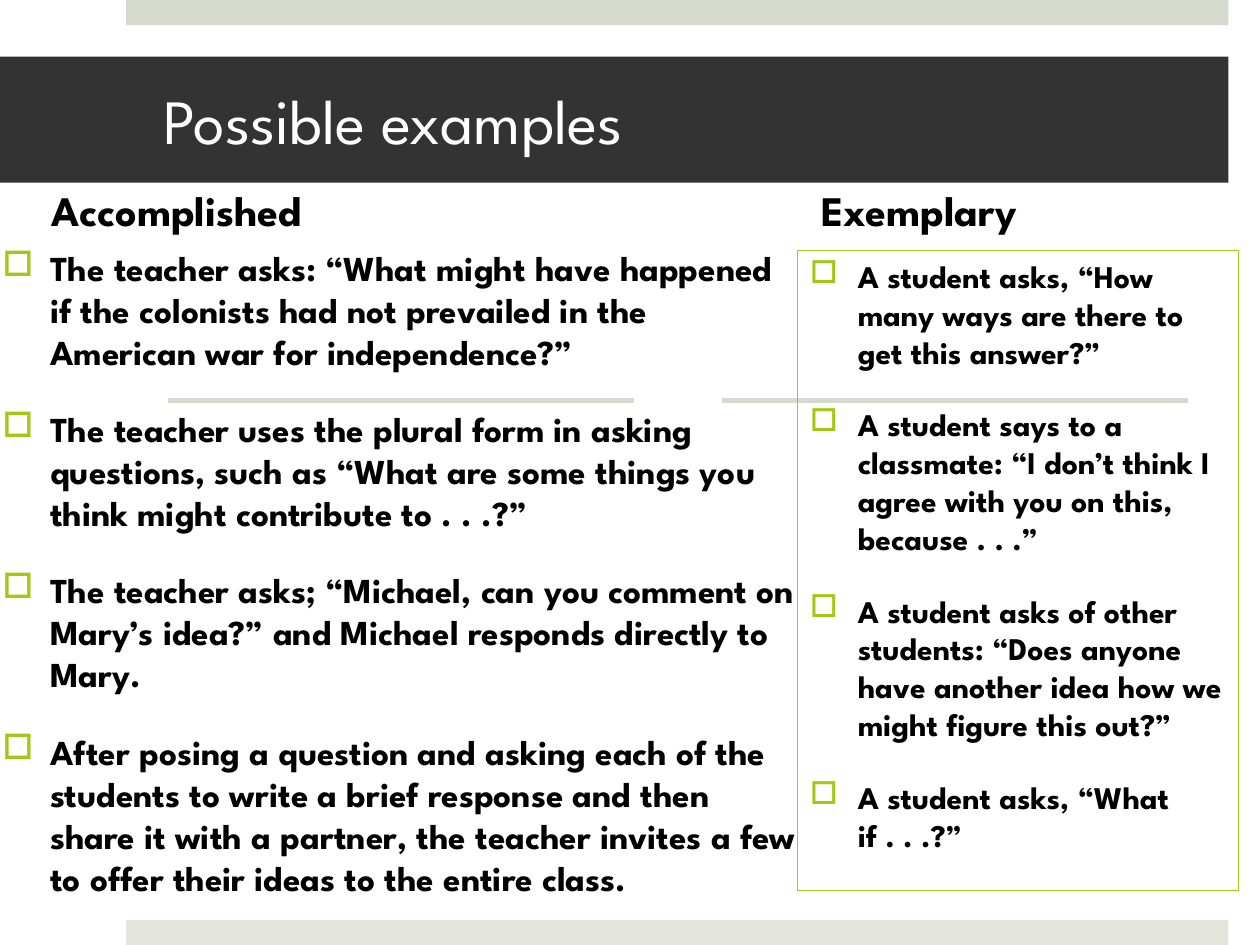
import pptx
import pptx.util
import pptx.dml.color
import pptx.enum.shapes
import pptx.enum.text
import pptx.oxml.ns
import lxml.etree

COLORS = {"band_top": "D6D9CD", "band_bottom": "E4E6DE", "rule": "D6D9CD",
          "banner": "333333", "title": "FFFFFF", "ink": "000000", "accent": "A2C816"}
FONT = "League Spartan"
WIDTH, HEIGHT = 10, 7.5
COLUMNS, ROWS = 100, 75
ANCHOR = pptx.enum.text.MSO_ANCHOR

TITLE = "Possible examples"
BANDS = [("band_top", (10, 0, 87.5, 2)), ("band_bottom", (10, 73, 87.5, 2))]
BANNER = (0, 4.5, 97.5, 10)
RULE_ROW, RULE_LENGTH, RULE_STARTS = 31.8, 37, (13.3, 57.3)
SECTIONS = [
    {"heading": "Accomplished", "heading_area": (3.1, 12.1, 44.2, 7),
     "area": (-0.8, 19.1, 65, 50), "size": 20, "outline": None,
     "items": [
         "The teacher asks: “What might have happened if the colonists had not prevailed in the American war for independence?”",
         "The teacher uses the plural form in asking questions, such as “What are some things you think might contribute to . . .?”",
         "The teacher asks; “Michael, can you comment on Mary’s idea?” and Michael responds directly to Mary.",
         "After posing a question and asking each of the students to write a brief response and then share it with a partner, the teacher invites a few to offer their ideas to the entire class.",
     ]},
    {"heading": "Exemplary", "heading_area": (64.2, 12.1, 36.1, 7),
     "area": (63.3, 19.9, 35, 50.8), "size": 18, "outline": "accent",
     "items": [
         "A student asks, “How many ways are there to get this answer?”",
         "A student says to a classmate: “I don’t think I agree with you on this, because . . .”",
         "A student asks of other students: “Does anyone have another idea how we might figure this out?”",
         "A student asks, “What if . . .?”",
     ]},
]


def color(name):
    return pptx.dml.color.RGBColor.from_string(COLORS[name])


def across(columns):
    return pptx.util.Inches(columns * WIDTH / COLUMNS)


def down(rows):
    return pptx.util.Inches(rows * HEIGHT / ROWS)


def place(area):
    left, top, width, height = area
    return across(left), down(top), across(width), down(height)


def apply(target, values):
    for name, value in values.items():
        setattr(target, name, value)


def add_block(page, area, fill):
    block = page.shapes.add_shape(pptx.enum.shapes.MSO_SHAPE.RECTANGLE, *place(area))
    block.shadow.inherit = False
    block.fill.solid()
    block.fill.fore_color.rgb = color(fill)
    block.line.fill.background()
    return block


def add_rule(page, start):
    rule = page.shapes.add_connector(
        pptx.enum.shapes.MSO_CONNECTOR.STRAIGHT, across(start), down(RULE_ROW),
        across(start + RULE_LENGTH), down(RULE_ROW))
    rule.line.color.rgb = color("rule")
    rule.line.width = pptx.util.Pt(3)
    properties = rule.element.find(pptx.oxml.ns.qn("p:spPr"))
    lxml.etree.SubElement(properties, pptx.oxml.ns.qn("a:effectLst"))


def add_bullet(para):
    indent = pptx.util.Inches(0.38)
    properties = para._p.get_or_add_pPr()
    properties.set("marL", str(indent))
    properties.set("indent", str(-indent))
    tint = lxml.etree.SubElement(properties, pptx.oxml.ns.qn("a:buClr"))
    lxml.etree.SubElement(tint, pptx.oxml.ns.qn("a:srgbClr"), val=COLORS["accent"])
    lxml.etree.SubElement(properties, pptx.oxml.ns.qn("a:buChar"), char="□")


def write(box, texts, size, ink, bold, anchor, before=0, bulleted=False):
    frame = box.text_frame
    apply(frame, {"word_wrap": True, "vertical_anchor": anchor})
    for index, text in enumerate(texts):
        para = frame.paragraphs[0] if index == 0 else frame.add_paragraph()
        apply(para, {"alignment": pptx.enum.text.PP_ALIGN.LEFT,
                     "space_before": pptx.util.Pt(before)})
        if bulleted:
            add_bullet(para)
        span = para.add_run()
        span.text = text
        apply(span.font, {"name": FONT, "size": pptx.util.Pt(size), "bold": bold})
        span.font.color.rgb = color(ink)


def add_section(page, section):
    heading = page.shapes.add_textbox(*place(section["heading_area"]))
    write(heading, [section["heading"]], 24, "ink", True, ANCHOR.BOTTOM, 20)
    box = page.shapes.add_textbox(*place(section["area"]))
    if section["outline"]:
        box.line.color.rgb = color(section["outline"])
        box.line.width = pptx.util.Pt(0.75)
    write(box, section["items"], section["size"], "ink", True, ANCHOR.TOP, 20, True)


def main():
    deck = pptx.Presentation()
    apply(deck, {"slide_width": across(COLUMNS), "slide_height": down(ROWS)})
    page = deck.slides.add_slide(deck.slide_layouts[6])
    for fill, area in BANDS:
        add_block(page, area, fill)
    for start in RULE_STARTS:
        add_rule(page, start)
    banner = add_block(page, BANNER, "banner")
    apply(banner.text_frame, {"margin_left": across(13), "margin_right": across(3)})
    write(banner, [TITLE], 36, "title", False, ANCHOR.MIDDLE)
    for section in SECTIONS:
        add_section(page, section)
    deck.save("out.pptx")


if __name__ == "__main__":
    main()
